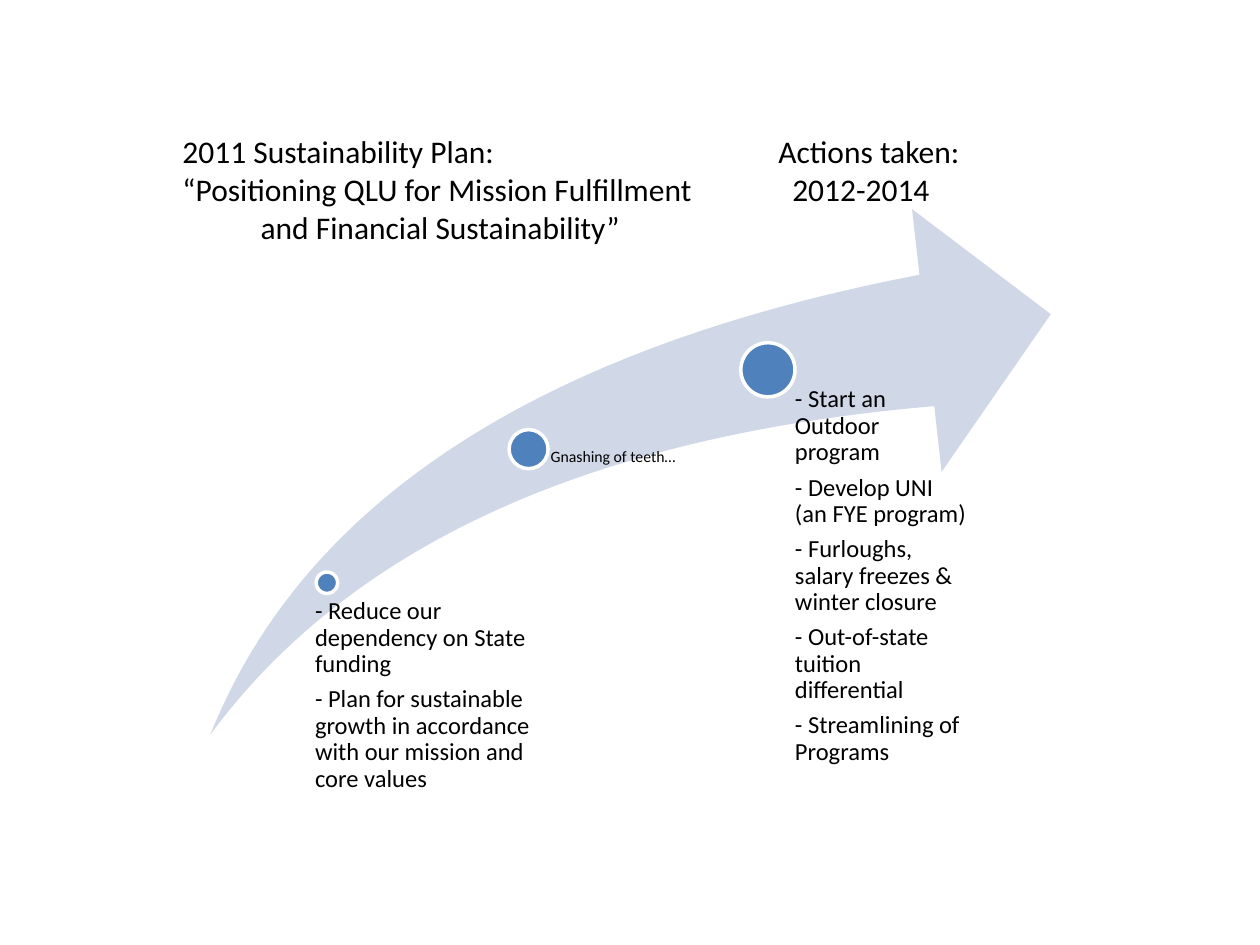
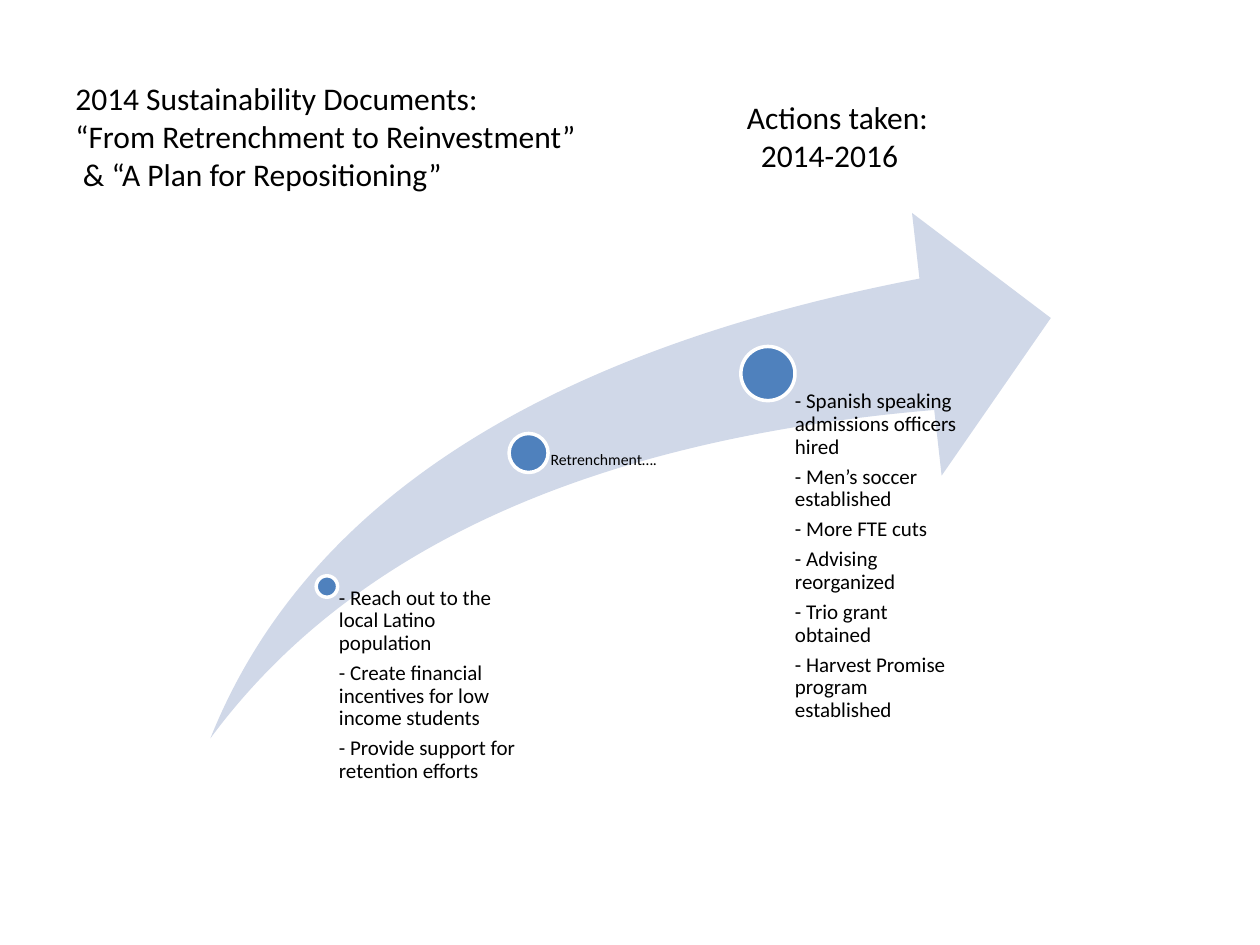
from pptx import Presentation
from pptx import util as u
from pptx.dml.color import RGBColor
from pptx.enum import shapes, text

BLACK = RGBColor(0x00, 0x00, 0x00)
WHITE = RGBColor(0xFF, 0xFF, 0xFF)
BLUE = RGBColor(0x4F, 0x81, 0xBD)
PALE_BLUE = RGBColor(0xD0, 0xD8, 0xE8)
FONT = "Calibri"
HEADING_SIZE = 18
NOTE_SIZE = 9
BLANK_LAYOUT = 6

# Positions inside the arrow's box: left, top, diameter
DOTS = [(0.84, 2.88, 0.17), (2.37, 1.75, 0.31), (4.21, 1.06, 0.43)]
# Label boxes inside the arrow's box, with their left insets
NOTE_AREA = (2.53, 1.9, 1.6, 2.27)
ACTIONS_AREA = (4.41, 1.41, 1.6, 2.9)
LABEL_INSETS = [0.09, 0.17, 0.23]

# Headings hold (wording, indent) pairs
TIMELINES = [
    {
        "plan_box": (1.35, 1, 4.36, 1.01),
        "plan": [("2011 Sustainability Plan:", 0),
                 ("“Positioning QLU for Mission Fulfillment", 0),
                 ("and Financial Sustainability”", 0.62)],
        "actions_box": (6.08, 1, 1.77, 0.71),
        "period": "2012-2014",
        "arrow_box": (1.67, 1.66, 6.67, 4.17),
        "goals_area": (0.74, 3.09, 2.09, 1.2),
        "size": 14,
        "goals": ["- Reduce our dependency on State funding",
                  "- Plan for sustainable growth in accordance with our "
                  "mission and core values"],
        "note": "Gnashing of teeth…",
        "actions": ["- Start an Outdoor program",
                    "- Develop UNI (an FYE program)",
                    "- Furloughs, salary freezes & winter closure",
                    "- Out-of-state tuition differential",
                    "- Streamlining of Programs"],
    },
    {
        "plan_box": (0.5, 0.58, 4.22, 1.31),
        "plan": [("2014 Sustainability Documents:", 0),
                 ("“From Retrenchment to Reinvestment”", 0),
                 ("& “A Plan for Repositioning”", 0.06)],
        "actions_box": (5.83, 0.73, 1.71, 1.01),
        "period": "2014-2016",
        "arrow_box": (1.67, 1.69, 6.67, 4.17),
        "goals_area": (0.93, 2.97, 1.55, 1.2),
        "size": 12,
        "goals": ["- Reach out to the local Latino population",
                  "- Create financial incentives for low income students",
                  "- Provide support for retention efforts"],
        "note": "Retrenchment….",
        "actions": ["- Spanish speaking admissions officers hired",
                    "- Men’s soccer established",
                    "- More FTE cuts",
                    "- Advising reorganized",
                    "- Trio grant obtained",
                    "- Harvest Promise program established"],
    },
]


def set_all(target, values):
    for name, value in values.items():
        setattr(target, name, value)


def within(outer, area):
    """Move an area given relative to the outer box onto the page."""
    return (outer[0] + area[0], outer[1] + area[1], *area[2:])


def add_text(page, box, lines, size, frame_format, para_format):
    """Add a text box of (wording, indent) lines."""
    frame = page.shapes.add_textbox(*map(u.Inches, box)).text_frame
    set_all(frame, frame_format)
    for index, (wording, indent) in enumerate(lines):
        para = frame.add_paragraph() if index else frame.paragraphs[0]
        set_all(para, para_format)
        if indent:
            para._p.get_or_add_pPr().set("marL", str(u.Inches(indent)))
        span = para.add_run()
        span.text = wording
        set_all(span.font, {"name": FONT, "size": u.Pt(size)})
        span.font.color.rgb = BLACK


def add_heading(page, box, lines):
    add_text(page, box, lines, HEADING_SIZE,
             {"word_wrap": False,
              "auto_size": text.MSO_AUTO_SIZE.SHAPE_TO_FIT_TEXT}, {})


def add_label(page, box, lines, size, inset):
    add_text(page, box, [(line, 0) for line in lines], size,
             {"word_wrap": True, "margin_left": u.Inches(inset),
              "margin_top": 0, "margin_right": 0, "margin_bottom": 0},
             {"line_spacing": 0.9, "space_after": u.Pt(0.35 * size)})


def add_filled(page, kind, box, color):
    shape = page.shapes.add_shape(kind, *map(u.Inches, box))
    shape.shadow.inherit = False
    shape.fill.solid()
    shape.fill.fore_color.rgb = color
    return shape


def add_swoosh(page, box, timeline):
    # Rising arrow
    arrow = add_filled(page, shapes.MSO_SHAPE.SWOOSH_ARROW, box, PALE_BLUE)
    arrow.line.fill.background()
    arrow.adjustments[0] = 0.25
    arrow.adjustments[1] = 0.25

    # Growing dots, each with its label
    labels = [
        (timeline["goals_area"], timeline["goals"], timeline["size"]),
        (NOTE_AREA, [timeline["note"]], NOTE_SIZE),
        (ACTIONS_AREA, timeline["actions"], timeline["size"]),
    ]
    for (left, top, width), label, inset in zip(DOTS, labels, LABEL_INSETS):
        dot = add_filled(page, shapes.MSO_SHAPE.OVAL,
                         within(box, (left, top, width, width)), BLUE)
        dot.line.color.rgb = WHITE
        dot.line.width = u.Pt(2)
        area, lines, size = label
        add_label(page, within(box, area), lines, size, inset)


def add_timeline_page(deck, timeline):
    page = deck.slides.add_slide(deck.slide_layouts[BLANK_LAYOUT])
    add_heading(page, timeline["plan_box"], timeline["plan"])
    add_heading(page, timeline["actions_box"],
                [("Actions taken:", 0), (timeline["period"], 0.11)])
    add_swoosh(page, timeline["arrow_box"], timeline)


def main():
    deck = Presentation()
    set_all(deck, {"slide_width": u.Inches(10), "slide_height": u.Inches(7.5)})
    for timeline in TIMELINES:
        add_timeline_page(deck, timeline)
    deck.save("out.pptx")


if __name__ == "__main__":
    main()
